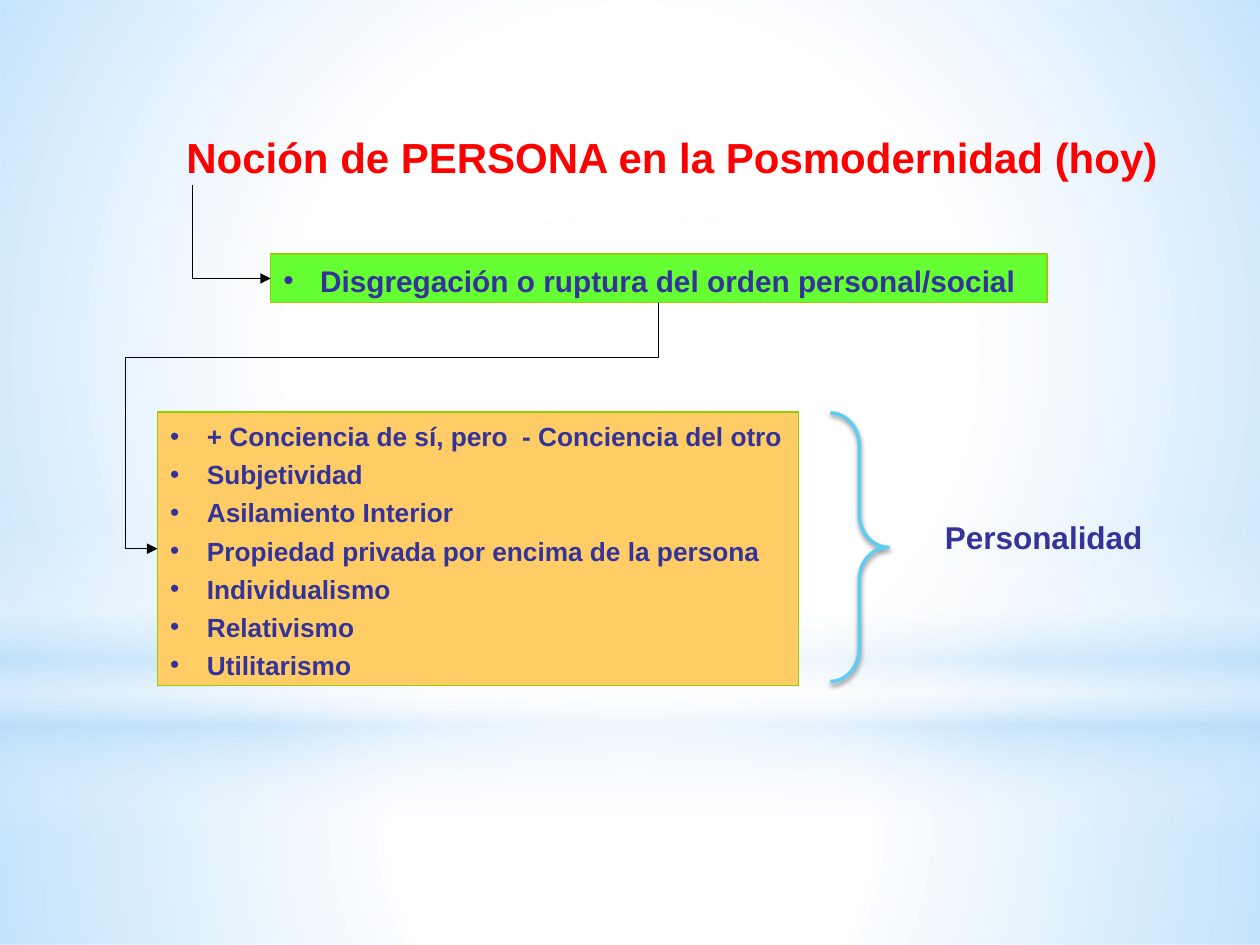
from pptx import Presentation
from pptx.dml.color import RGBColor
from pptx.enum.shapes import MSO_CONNECTOR, MSO_SHAPE
from pptx.enum.text import MSO_ANCHOR, MSO_AUTO_SIZE, PP_ALIGN
from pptx.oxml import parse_xml
from pptx.oxml.ns import nsdecls
from pptx.util import Pt

# Content
TITLE = "Noción de PERSONA en la Posmodernidad (hoy)"
RUPTURE = ["Disgregación o ruptura del orden personal/social"]
TRAITS = [
    "+ Conciencia de sí, pero  - Conciencia del otro",
    "Subjetividad",
    "Asilamiento Interior",
    "Propiedad privada por encima de la persona",
    "Individualismo",
    "Relativismo",
    "Utilitarismo",
]
RESULT = "Personalidad"

WHITE, SKY, INDIGO = "FFFFFF", "B4DCFA", "333399"
RADIAL = '<a:path path="circle"><a:fillToRect l="50000" t="50000" r="50000" b="50000"/></a:path>'
LINEAR = '<a:lin ang="5400000" scaled="0"/>'

# Backdrop: shape, (left, top, width, height), direction, (position, colour, opacity)
BACKDROP = [
    (MSO_SHAPE.RECTANGLE, (0, 402, 720, 138), RADIAL,
     [(0, WHITE, 91), (37, WHITE, 76), (100, SKY, 79)]),
    (MSO_SHAPE.RECTANGLE, (0, 0, 720, 402), RADIAL,
     [(0, WHITE, 89), (48, WHITE, 62), (100, SKY, 79)]),
    (MSO_SHAPE.RECTANGLE, (0, 296.6, 720, 180), LINEAR,
     [(0, WHITE, 0), (29, WHITE, 30), (45, SKY, 40),
      (55, WHITE, 26), (65, SKY, 60), (100, WHITE, 0)]),
    (MSO_SHAPE.OVAL, (0, 126, 720, 402), RADIAL,
     [(0, WHITE, 100), (56, WHITE, 0)]),
]

# Elbow arrows: preset, begin and end before turning, rotation, adjustments
ELBOWS = [
    ("bentConnector2", (159.1, 110.2), (105.8, 154.8), 270, []),
    ("bentConnector4", (163, 100.1), (303.4, 386.6), 90, [22200, 106300]),
]


def colour(code):
    return RGBColor.from_string(code)


def place(shape, area):
    shape.left, shape.top, shape.width, shape.height = map(Pt, area)


def style(para, size, code):
    font = para.font
    font.name, font.size, font.bold = "Arial", Pt(size), True
    font.color.rgb = colour(code)


def add_shape(page, kind, area):
    shape = page.shapes.add_shape(kind, *map(Pt, area))
    shape.shadow.inherit = False
    return shape


def add_glow(page, kind, area, direction, stops):
    shape = add_shape(page, kind, area)
    shape.line.fill.background()
    marks = "".join(
        f'<a:gs pos="{pos * 1000}"><a:srgbClr val="{code}">'
        f'<a:alpha val="{opacity * 1000}"/></a:srgbClr></a:gs>'
        for pos, code, opacity in stops)
    shape.element.spPr.insert(2, parse_xml(
        f'<a:gradFill {nsdecls("a")} rotWithShape="1">'
        f'<a:gsLst>{marks}</a:gsLst>{direction}</a:gradFill>'))


def fill_list(box, items, size, fill):
    box.fill.solid()
    box.fill.fore_color.rgb = colour(fill)
    box.line.color.rgb = colour("99CC00")
    box.line.width = Pt(0.75)
    frame = box.text_frame
    frame.word_wrap = True
    frame.auto_size = MSO_AUTO_SIZE.NONE
    frame.vertical_anchor = MSO_ANCHOR.TOP
    frame.margin_top = Pt(5)
    for index, item in enumerate(items):
        para = frame.paragraphs[0] if index == 0 else frame.add_paragraph()
        para.text = item
        para.alignment = PP_ALIGN.LEFT
        para.space_before = Pt(3.75 if index else 0)
        props = para._p.get_or_add_pPr()
        props.set("marL", str(Pt(21)))
        props.set("indent", str(Pt(-21)))
        props.append(parse_xml(f'<a:buFont {nsdecls("a")} typeface="Arial"/>'))
        props.append(parse_xml(f'<a:buChar {nsdecls("a")} char="•"/>'))
        style(para, size, INDIGO)


def add_elbow(page, preset, begin, end, turn, adjustments):
    elbow = page.shapes.add_connector(MSO_CONNECTOR.ELBOW, *map(Pt, begin + end))
    elbow.line.color.rgb = colour("000000")
    elbow.line.width = Pt(0.75)
    props = elbow.element.spPr
    props.xfrm.set("rot", str(turn * 60000))
    guides = "".join(f'<a:gd name="adj{number}" fmla="val {value}"/>'
                     for number, value in enumerate(adjustments, 1))
    props.replace(props.prstGeom, parse_xml(
        f'<a:prstGeom {nsdecls("a")} prst="{preset}"><a:avLst>{guides}</a:avLst></a:prstGeom>'))
    elbow.line._get_or_add_ln().append(
        parse_xml(f'<a:tailEnd {nsdecls("a")} type="triangle"/>'))
    props.append(parse_xml(f'<a:effectLst {nsdecls("a")}/>'))


def main():
    deck = Presentation()
    deck.slide_width, deck.slide_height = Pt(720), Pt(540)
    page = deck.slides.add_slide(deck.slide_layouts[1])
    title, traits = page.shapes.title, page.placeholders[1]

    # Backdrop, kept behind the placeholders
    for glow in BACKDROP:
        add_glow(page, *glow)
    for holder in (title, traits):
        holder.element.getparent().append(holder.element)

    # Title
    place(title, (99.3, 77, 572.4, 44.6))
    title.text = TITLE
    frame = title.text_frame
    frame.word_wrap = True
    frame.auto_size = MSO_AUTO_SIZE.NONE
    frame.vertical_anchor = MSO_ANCHOR.TOP
    para = frame.paragraphs[0]
    para.alignment = PP_ALIGN.LEFT
    para.line_spacing = 0.8
    style(para, 24, "FF0000")

    # Lists
    place(traits, (90, 235.4, 366.5, 156.3))
    fill_list(traits, TRAITS, 15, "FFCC66")
    rupture = add_shape(page, MSO_SHAPE.RECTANGLE, (154.8, 145.1, 443.5, 27.8))
    fill_list(rupture, RUPTURE, 17, "66FF33")

    # Arrows
    for elbow in ELBOWS:
        add_elbow(page, *elbow)

    # Brace with a soft shadow
    brace = add_shape(page, MSO_SHAPE.RIGHT_BRACE, (474.5, 236, 33.1, 153.4))
    brace.adjustments[0], brace.adjustments[1] = 0.564, 0.5
    brace.fill.background()
    brace.line.color.rgb = colour("5ECCF3")
    brace.line.width = Pt(2)
    brace.element.spPr.effectLst.append(parse_xml(
        f'<a:outerShdw {nsdecls("a")} blurRad="{Pt(3.1)}" dist="{Pt(1.8)}" dir="5400000"'
        ' rotWithShape="0"><a:srgbClr val="000000"><a:alpha val="45000"/>'
        '</a:srgbClr></a:outerShdw>'))

    # Result
    result = page.shapes.add_textbox(*map(Pt, (532.8, 292.3, 140.4, 31)))
    result.text_frame.text = RESULT
    result.text_frame.word_wrap = False
    para = result.text_frame.paragraphs[0]
    style(para, 18, INDIGO)

    deck.save("out.pptx")


if __name__ == "__main__":
    main()
